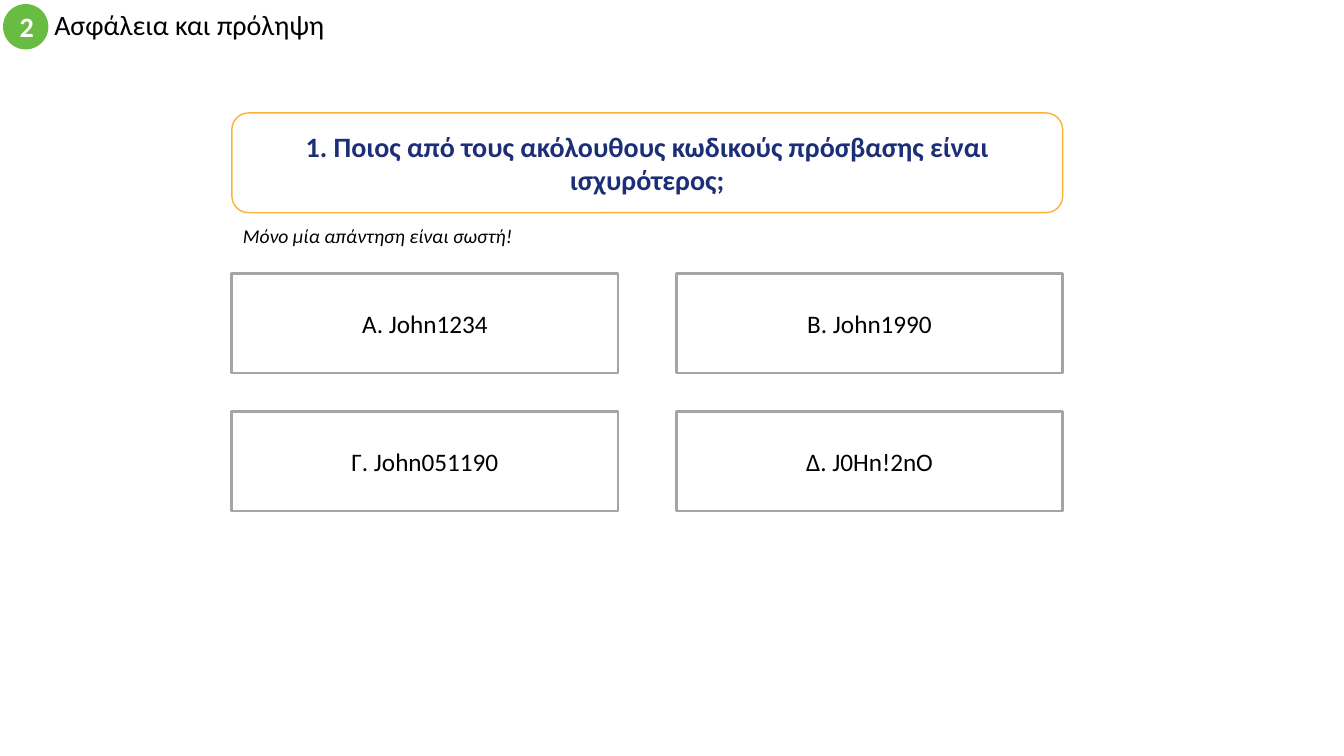
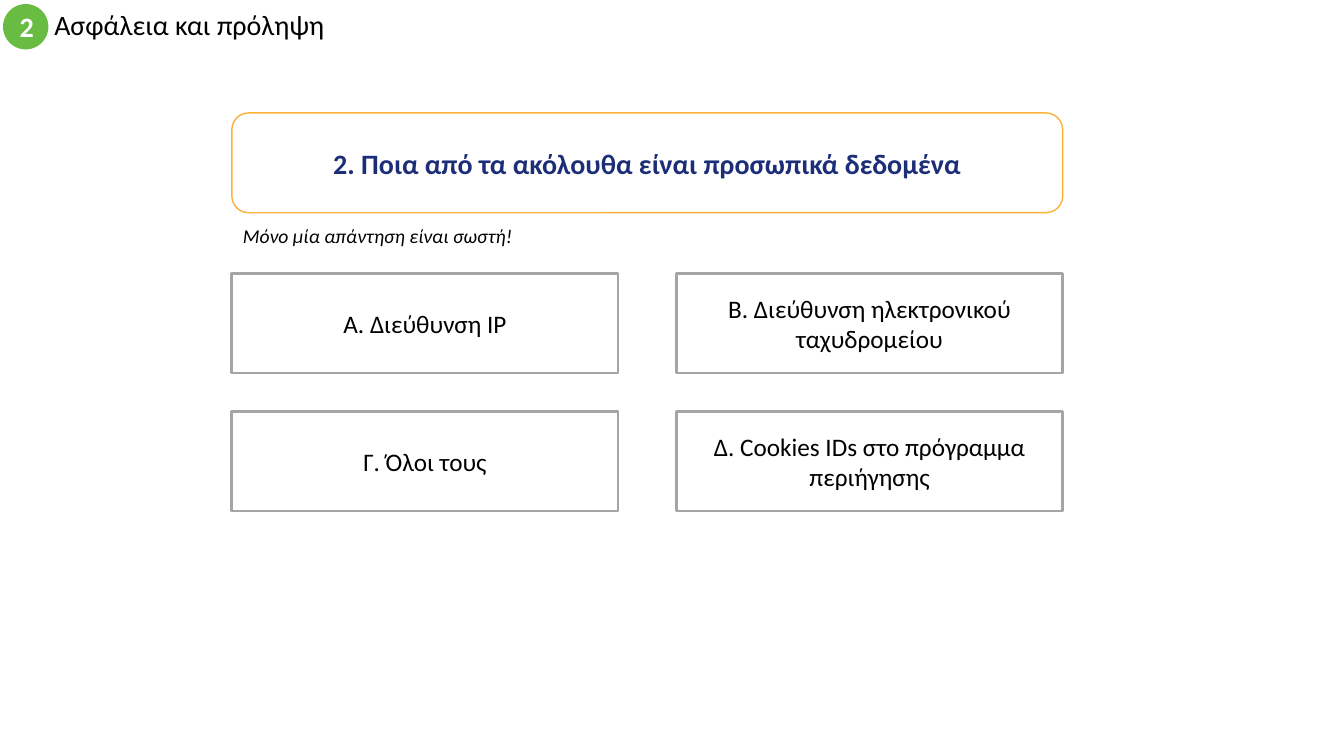
from pptx import Presentation
from pptx.dml.color import RGBColor
from pptx.enum.shapes import MSO_SHAPE
from pptx.enum.text import MSO_ANCHOR, PP_ALIGN
from pptx.util import Inches, Pt

OVAL = MSO_SHAPE.OVAL
RECTANGLE = MSO_SHAPE.RECTANGLE
ROUNDED = MSO_SHAPE.ROUNDED_RECTANGLE
MIDDLE, TOP = MSO_ANCHOR.MIDDLE, MSO_ANCHOR.TOP
CENTER, LEFT = PP_ALIGN.CENTER, PP_ALIGN.LEFT

FONT = "Calibri"
COLORS = {
    "white": "FFFFFF",
    "text": "000000",
    "badge": "68BC42",
    "question": "1C2E78",
    "question_border": "FCB13A",
    "answer_border": "A5A5A5",
}

SECTION_NUMBER = "2"
SECTION_TITLE = "Ασφάλεια και πρόληψη"
HINT = "Μόνο μία απάντηση είναι σωστή!"

# Boxes are left, top, width, height in inches
HEADER_BOX = (0.03, 0.04, 8.41, 0.45)
QUIZ_BOX = (2.3, 1.12, 8.24, 3.95)
ROW_HEIGHT = 0.99
HINT_OFFSET = 1.05
ANSWERS_OFFSET = 1.59
COLUMN_GAP = 0.58
ROW_GAP = 0.38

QUIZZES = [
    ("1. Ποιος από τους ακόλουθους κωδικούς πρόσβασης είναι ισχυρότερος;",
     ["A. John1234", "B. John1990", "Γ. John051190", "Δ. J0Hn!2nO"]),
    ("2. Ποια από τα ακόλουθα είναι προσωπικά δεδομένα",
     ["A. Διεύθυνση IP", "B. Διεύθυνση ηλεκτρονικού ταχυδρομείου",
      "Γ. Όλοι τους", "Δ. Cookies IDs στο πρόγραμμα περιήγησης"]),
]


def color(name):
    return RGBColor.from_string(COLORS[name])


def write(shape, text, size, color_name="text", bold=False, italic=False,
          align=CENTER, anchor=MIDDLE, insets=(0.1, 0.05)):
    """Fill a shape with one styled paragraph, which is returned."""
    frame = shape.text_frame
    frame.text = text
    frame.word_wrap = True
    frame.vertical_anchor = anchor
    frame.margin_left = frame.margin_right = Inches(insets[0])
    frame.margin_top = frame.margin_bottom = Inches(insets[1])
    paragraph = frame.paragraphs[0]
    paragraph.alignment = align
    font = paragraph.runs[0].font
    font.name, font.size = FONT, Pt(size)
    font.bold, font.italic = bold, italic
    font.color.rgb = color(color_name)
    return paragraph


def add_panel(slide, kind, box, fill, border=None, border_width=1):
    shape = slide.shapes.add_shape(kind, *map(Inches, box))
    shape.shadow.inherit = False
    shape.fill.solid()
    shape.fill.fore_color.rgb = color(fill)
    if border:
        shape.line.color.rgb = color(border)
        shape.line.width = Pt(border_width)
    else:
        shape.line.fill.background()
    return shape


def add_header(slide, box):
    left, top, width, height = box
    # Section title
    title_left = left + height - 0.04
    title = slide.shapes.add_textbox(
        *map(Inches, (title_left, top, left + width - title_left, height)))
    paragraph = write(title, SECTION_TITLE, 20, align=LEFT)
    paragraph.line_spacing = 0.9
    # Numbered badge
    badge = add_panel(slide, OVAL, (left, top, height, height), "badge")
    write(badge, SECTION_NUMBER, 20, "white", bold=True)


def add_question(slide, box):
    left, top, width, text = box[0], box[1], box[2], box[3]
    panel = add_panel(slide, ROUNDED, (left, top, width, ROW_HEIGHT),
                      "white", "question_border")
    panel.adjustments[0] = 0.167
    write(panel, text, 20, "question", bold=True)
    # Hint below the question
    hint = slide.shapes.add_textbox(
        *map(Inches, (left + 0.01, top + HINT_OFFSET, 3.57, 0.34)))
    write(hint, HINT, 14, italic=True, align=LEFT, anchor=TOP)


def add_answers(slide, box, answers):
    left, top, width, height = box
    cell_width = (width - COLUMN_GAP) / 2
    cell_height = (height - ROW_GAP) / 2
    for index, answer in enumerate(answers):
        row, column = divmod(index, 2)
        cell = (left + column * (cell_width + COLUMN_GAP),
                top + row * (cell_height + ROW_GAP), cell_width, cell_height)
        panel = add_panel(slide, RECTANGLE, cell, "white", "answer_border", 2)
        write(panel, answer, 18, insets=(0, 0))


def add_quiz_slide(presentation, question, answers):
    slide = presentation.slides.add_slide(presentation.slide_layouts[6])
    left, top, width, height = QUIZ_BOX
    add_header(slide, HEADER_BOX)
    add_question(slide, (left, top, width, question))
    add_answers(slide, (left, top + ANSWERS_OFFSET, width,
                        height - ANSWERS_OFFSET), answers)


def main():
    presentation = Presentation()
    presentation.slide_width = Inches(13.33)
    presentation.slide_height = Inches(7.5)
    for question, answers in QUIZZES:
        add_quiz_slide(presentation, question, answers)
    presentation.save("out.pptx")


if __name__ == "__main__":
    main()
